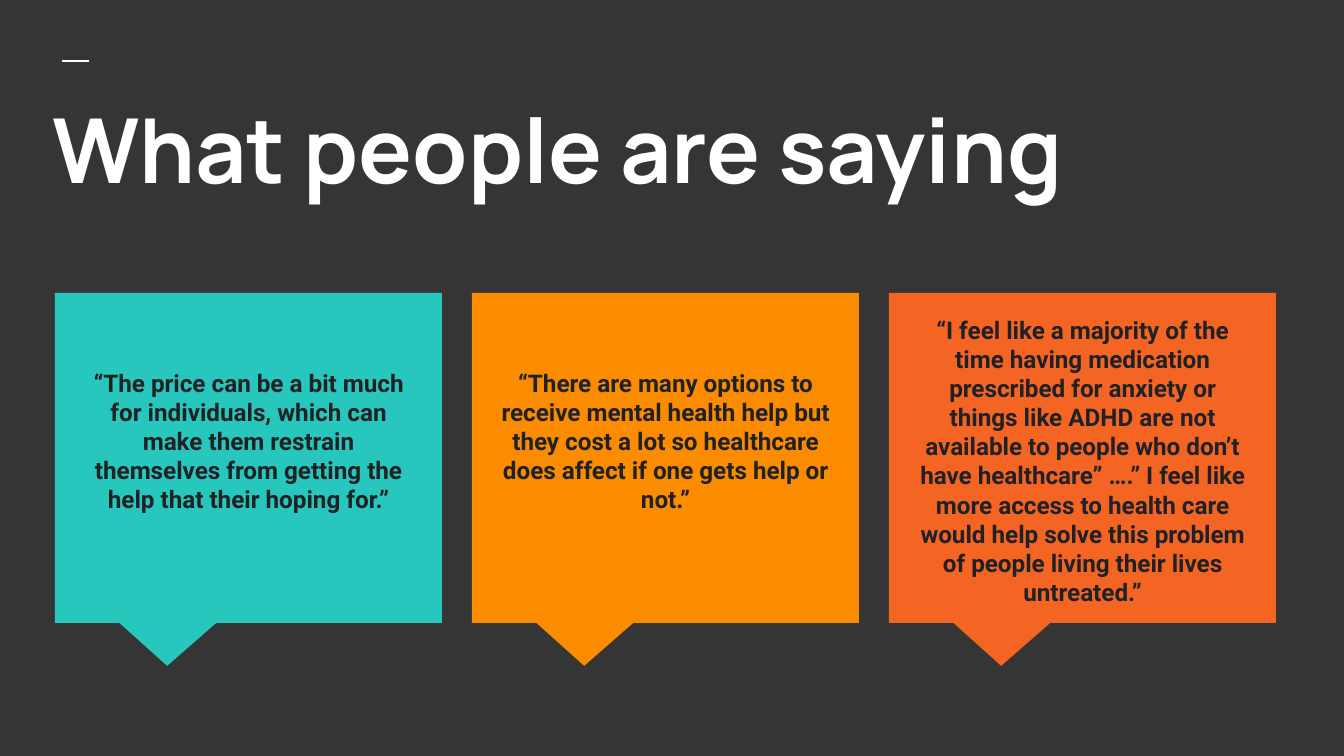
from dataclasses import dataclass

from lxml.etree import SubElement
from pptx import Presentation
from pptx.dml.color import RGBColor
from pptx.enum.shapes import MSO_CONNECTOR, MSO_SHAPE
from pptx.enum.text import MSO_ANCHOR, PP_ALIGN
from pptx.oxml.ns import qn
from pptx.util import Pt

TITLE = "What people are saying"
# quote, callout colour, space above the text in px
QUOTES = [
    ("“The price can be a bit much for individuals, which can make them "
     "restrain themselves from getting the help that their hoping for.”",
     "27C7BD", 66),
    ("“There are many options to receive mental health help but they cost "
     "a lot so healthcare does affect if one gets help or not.”",
     "FB8C00", 66),
    ("“I feel like a majority of the time having medication prescribed for "
     "anxiety or things like ADHD are not available to people who don’t have "
     "healthcare” ….” I feel like more access to health care would help solve "
     "this problem of people living their lives untreated.”",
     "F46524", 13),
]


@dataclass(frozen=True)
class Theme:
    background: str = "353535"
    light: str = "FFFFFF"
    dark: str = "202124"
    title_font: str = "Manrope"
    body_font: str = "Roboto"
    title_size: int = 48
    body_size: int = 13
    rule_width: float = 1.5


THEME = Theme()
SLIDE_W, SLIDE_H = 1344, 756
INSET = 13
CARD_X, CARD_Y, CARD_W, CARD_H, CARD_GAP = 55, 293, 387, 330, 30
TEXT_DX, TEXT_DY, TEXT_H = 11, 9, 320
TAIL = (-0.21, 0.63)


def px(*lengths):
    return [round(n * 914400 / 134.4) for n in lengths]


def rgb(value):
    return RGBColor.from_string(value)


def add_text(slide, box, text, name, size, color, align, top=INSET):
    tf = slide.shapes.add_textbox(*px(*box)).text_frame
    left, top, right, bottom = px(INSET, top, INSET, INSET)
    frame = dict(word_wrap=True, vertical_anchor=MSO_ANCHOR.TOP,
                 margin_left=left, margin_top=top,
                 margin_right=right, margin_bottom=bottom)
    for key, value in frame.items():
        setattr(tf, key, value)
    p = tf.paragraphs[0]
    p.alignment = align
    r = p.add_run()
    r.text = text
    for key, value in dict(name=name, size=Pt(size), bold=True).items():
        setattr(r.font, key, value)
    r.font.color.rgb = rgb(color)


def add_rule(slide, x1, x2, y):
    rule = slide.shapes.add_connector(MSO_CONNECTOR.STRAIGHT, *px(x1, y, x2, y))
    rule.line.color.rgb = rgb(THEME.light)
    rule.line.width = Pt(THEME.rule_width)
    SubElement(rule._element.spPr, qn("a:effectLst"))


def add_callout(slide, box, color):
    sp = slide.shapes.add_shape(MSO_SHAPE.RECTANGULAR_CALLOUT, *px(*box))
    sp.shadow.inherit = False
    sp.fill.solid()
    sp.fill.fore_color.rgb = rgb(color)
    sp.line.fill.background()
    for i, value in enumerate(TAIL):
        sp.adjustments[i] = value


def main():
    prs = Presentation()
    prs.slide_width, prs.slide_height = px(SLIDE_W, SLIDE_H)
    slide = prs.slides.add_slide(prs.slide_layouts[6])
    slide.background.fill.solid()
    slide.background.fill.fore_color.rgb = rgb(THEME.background)

    add_rule(slide, 62, 89, 61)
    add_text(slide, (39, 81, 1267, 150), TITLE, THEME.title_font,
             THEME.title_size, THEME.light, PP_ALIGN.LEFT)
    for i, (quote, color, top) in enumerate(QUOTES):
        x = CARD_X + i * (CARD_W + CARD_GAP)
        add_callout(slide, (x, CARD_Y, CARD_W, CARD_H), color)
        add_text(slide,
                 (x + TEXT_DX, CARD_Y + TEXT_DY, CARD_W - 2 * TEXT_DX, TEXT_H),
                 quote, THEME.body_font, THEME.body_size, THEME.dark,
                 PP_ALIGN.CENTER, top)
    prs.save("out.pptx")


if __name__ == "__main__":
    main()
